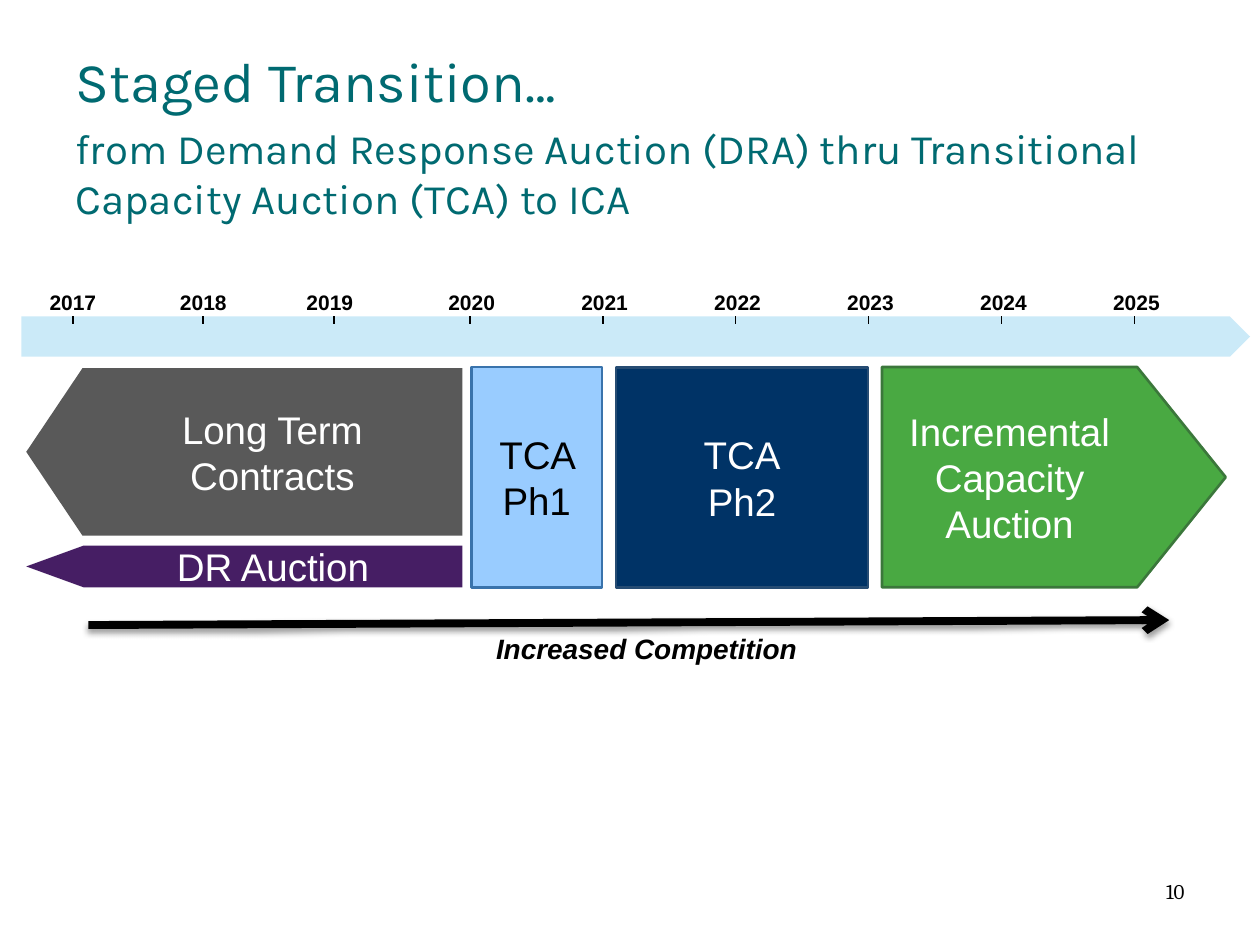
import pptx
import pptx.util
import pptx.dml.color
import pptx.enum.shapes
import pptx.enum.text
import pptx.oxml
import pptx.oxml.ns

Cm = pptx.util.Cm
Pt = pptx.util.Pt
SHAPE = pptx.enum.shapes.MSO_SHAPE
ALIGN = pptx.enum.text.PP_ALIGN
ANCHOR = pptx.enum.text.MSO_ANCHOR

COLORS = {
    "teal": "006A71", "black": "000000", "white": "FFFFFF", "sky": "54BCEB",
    "light blue": "99CCFF", "light blue edge": "3973AC",
    "navy": "003366", "navy edge": "264C73",
    "green": "49A942", "green edge": "3B773B",
    "gray": "595959", "purple": "461E64",
}


def rgb(color):
    return pptx.dml.color.RGBColor.from_string(COLORS[color])


def xml(markup):
    return pptx.oxml.parse_xml(markup.replace(">", f" {pptx.oxml.ns.nsdecls('a')}>", 1))


def write(paragraph, text, size, color, font="Arial", align=ALIGN.CENTER, bold=False, italic=False):
    paragraph.alignment = align
    run = paragraph.add_run()
    run.text = text
    run.font.name = font
    run.font.size = Pt(size)
    run.font.bold = bold
    run.font.italic = italic
    run.font.color.rgb = rgb(color)


def add_label(slide, box, text, size, wrap=True, **style):
    label = slide.shapes.add_textbox(*map(Cm, box))
    label.text_frame.word_wrap = wrap
    write(label.text_frame.paragraphs[0], text, size, "black", **style)


def add_block(slide, box, kind, adjustments, fill, edge=None, lines=(), color="white"):
    block = slide.shapes.add_shape(kind, *map(Cm, box))
    block.shadow.inherit = False
    for index, value in enumerate(adjustments):
        block.adjustments[index] = value
    block.fill.solid()
    block.fill.fore_color.rgb = rgb(fill)
    if edge:
        block.line.color.rgb = rgb(edge)
        block.line.width = Pt(1.5)
    else:
        block.line.fill.background()
    frame = block.text_frame
    frame.word_wrap = True
    frame.vertical_anchor = ANCHOR.MIDDLE
    for index, line in enumerate(lines):
        paragraph = frame.add_paragraph() if index else frame.paragraphs[0]
        write(paragraph, line, 22, color)
    return block


def add_line(slide, start, end, width, effects="<a:effectLst></a:effectLst>"):
    line = slide.shapes.add_connector(
        pptx.enum.shapes.MSO_CONNECTOR.STRAIGHT, *map(Cm, start + end))
    line.line.color.rgb = rgb("black")
    line.line.width = Pt(width)
    line._element.spPr.append(xml(effects))
    return line


def add_heading(slide, box):
    heading = slide.shapes.title
    heading.left, heading.top, heading.width, heading.height = map(Cm, box)
    frame = heading.text_frame
    frame.word_wrap = True
    frame.auto_size = pptx.enum.text.MSO_AUTO_SIZE.NONE
    frame.vertical_anchor = ANCHOR.TOP
    write(frame.paragraphs[0], "Staged Transition…", 32, "teal", "Karla", ALIGN.LEFT)
    subtitle = frame.add_paragraph()
    subtitle.space_before = Pt(4.8)
    write(subtitle, "from Demand Response Auction (DRA) thru Transitional Capacity Auction (TCA) to ICA",
          24, "teal", "Karla", ALIGN.LEFT)


def add_timeline(slide, box):
    left, top, width, height = box
    band_top = top + 0.66
    band = add_block(slide, (left, band_top, width, height - 0.66), SHAPE.PENTAGON, [0.5], "sky")
    band.fill._xPr.find(".//" + pptx.oxml.ns.qn("a:srgbClr")).append(
        xml('<a:alpha val="30000"></a:alpha>'))
    early = [(1.04, 1.04), (3.67, 3.67), (6.3, 6.22)]
    later = [(9.04 + 2.68 * step, 9.08 + 2.68 * step) for step in range(6)]
    for year, (tick, center) in enumerate(early + later, 2017):
        add_label(slide, (left + center - 0.94, top, 1.88, 0.76), str(year), 12, bold=True)
        add_line(slide, (left + tick, band_top), (left + tick, band_top + 0.15), 1)


def add_stages(slide, box):
    left, top, width, height = box
    add_block(slide, (left, top + 0.02, 8.79, 3.38), SHAPE.LEFT_ARROW, [1, 0.336],
              "gray", lines=["Long Term Contracts"])
    add_block(slide, (left, top + height - 0.84, 8.79, 0.84), SHAPE.LEFT_ARROW, [1, 1.375],
              "purple", lines=["DR Auction"])
    add_block(slide, (left + 8.97, top, 2.64, height), SHAPE.RECTANGLE, [],
              "light blue", "light blue edge", ["TCA Ph1"], "black")
    add_block(slide, (left + 11.89, top + 0.01, 5.08, height), SHAPE.RECTANGLE, [],
              "navy", "navy edge", ["TCA", "Ph2"])
    add_block(slide, (left + width - 6.93, top, 6.93, height), SHAPE.RIGHT_ARROW, [1, 0.402],
              "green", "green edge", ["Incremental Capacity Auction"])


def add_competition(slide, box):
    left, top, width, height = box
    shadow = ('<a:effectLst><a:outerShdw blurRad="39400" dist="20300" dir="5400000" rotWithShape="0">'
              '<a:srgbClr val="000000"><a:alpha val="38000"/></a:srgbClr></a:outerShdw></a:effectLst>')
    arrow = add_line(slide, (left, top + 0.1), (left + width, top), 4.5, shadow)
    arrow.line._get_or_add_ln().append(xml('<a:tailEnd type="arrow"></a:tailEnd>'))
    add_label(slide, (left + 7.97, top + 0.1, 6.65, height - 0.1), "Increased Competition", 16,
              wrap=False, align=ALIGN.LEFT, bold=True, italic=True)


def main():
    deck = pptx.Presentation()
    deck.slide_width, deck.slide_height = Cm(25.4), Cm(19.05)
    slide = deck.slides.add_slide(deck.slide_layouts[5])
    add_heading(slide, (1.27, 0.81, 22.66, 2.11))
    add_label(slide, (22.66, 17.58, 1.47, 1.47), "10", 12, font="Cambria", align=ALIGN.RIGHT)
    add_timeline(slide, (0.43, 5.72, 24.77, 1.47))
    add_stages(slide, (0.53, 7.4, 24.18, 4.44))
    add_competition(slide, (1.78, 12.5, 21.79, 1.04))
    deck.save("out.pptx")


if __name__ == "__main__":
    main()
